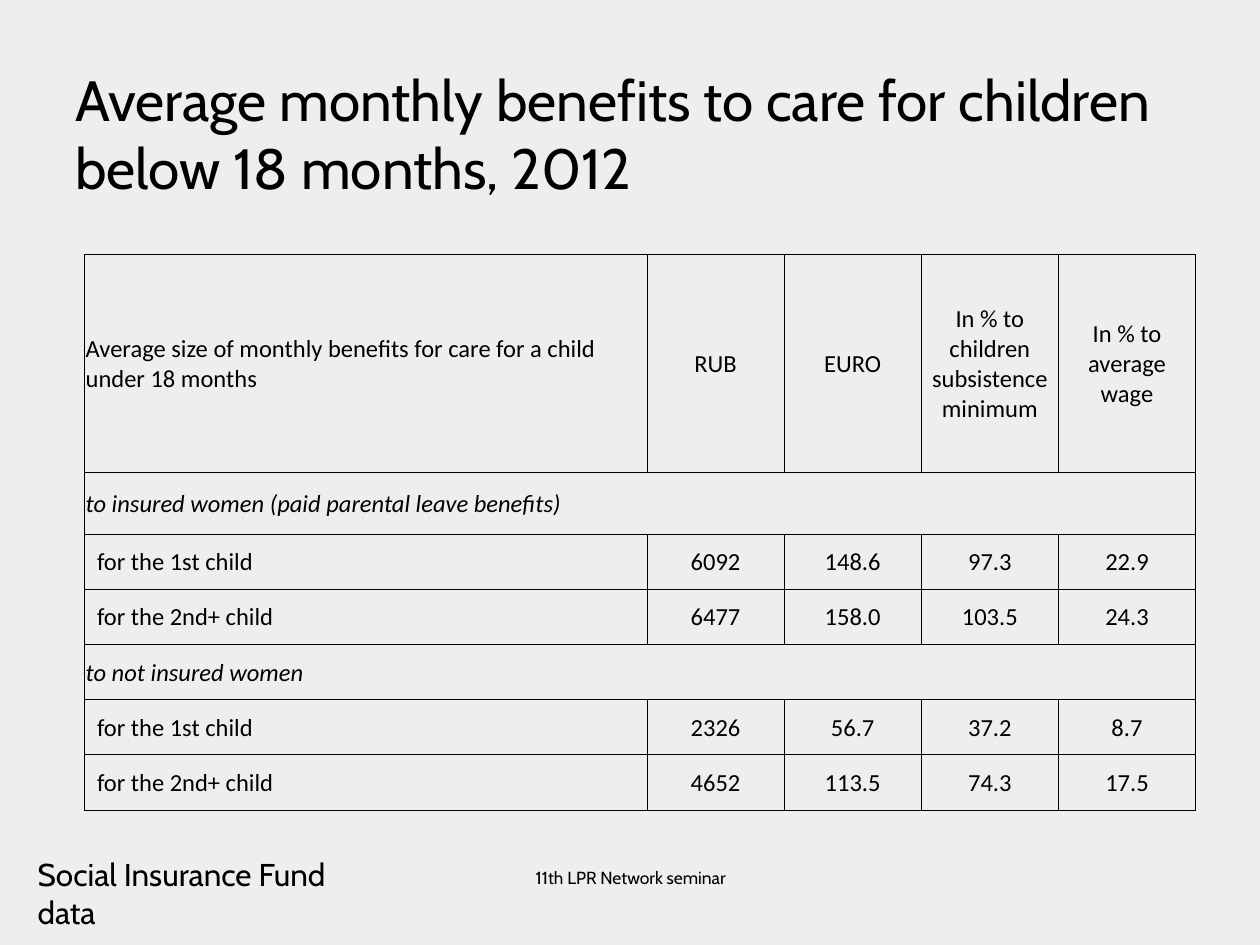
from lxml import etree
from pptx import Presentation
from pptx.dml.color import RGBColor
from pptx.enum.text import MSO_ANCHOR, MSO_AUTO_SIZE, PP_ALIGN
from pptx.oxml.ns import qn
from pptx.util import Inches, Pt

LEFT, CENTER = PP_ALIGN.LEFT, PP_ALIGN.CENTER
TOP, MIDDLE, BOTTOM = MSO_ANCHOR.TOP, MSO_ANCHOR.MIDDLE, MSO_ANCHOR.BOTTOM
FIT_SHAPE = MSO_AUTO_SIZE.SHAPE_TO_FIT_TEXT
NO_FIT = MSO_AUTO_SIZE.NONE

COLORS = {"background": "EEEEEE", "ink": "000000"}
BODY_FONT, TABLE_FONT = "Cabin", "Calibri"
BORDER_WIDTH = Pt(0.5)
GROUP_INDENT = Inches(0.1)

COLUMN_SHARES = [4.47, 1.09, 1.09, 1.09, 1.09]
ROW_HEIGHTS = [1.74, 0.49] + [0.44] * 5
BENEFITS = [
    ["Average size of monthly benefits for care for a child under 18 months",
     "RUB", "EURO", "In % to children subsistence minimum", "In % to average wage"],
    ["to insured women (paid parental leave benefits)"],
    ["for the 1st child", "6092", "148.6", "97.3", "22.9"],
    ["for the 2nd+ child", "6477", "158.0", "103.5", "24.3"],
    ["to not insured women"],
    ["for the 1st child", "2326", "56.7", "37.2", "8.7"],
    ["for the 2nd+ child", "4652", "113.5", "74.3", "17.5"],
]


def apply(target, values):
    for name, value in values.items():
        setattr(target, name, value)


def write(frame, words, font_name, size, align=LEFT, italic=False):
    paragraph = frame.paragraphs[0]
    paragraph.alignment = align
    run = paragraph.add_run()
    run.text = words
    apply(run.font, {"name": font_name, "size": Pt(size), "bold": False, "italic": italic})
    run.font.color.rgb = RGBColor.from_string(COLORS["ink"])


def add_text(slide, box, words, size, align=LEFT, anchor=TOP, fit=NO_FIT):
    frame = slide.shapes.add_textbox(*map(Inches, box)).text_frame
    apply(frame, {"word_wrap": True, "auto_size": fit, "vertical_anchor": anchor})
    write(frame, words, BODY_FONT, size, align)


def add_borders(cell):
    properties = cell._tc.get_or_add_tcPr()
    for side in ("a:lnL", "a:lnR", "a:lnT", "a:lnB"):
        line = etree.SubElement(properties, qn(side), w=str(BORDER_WIDTH))
        fill = etree.SubElement(line, qn("a:solidFill"))
        etree.SubElement(fill, qn("a:srgbClr"), val=COLORS["ink"])


def format_cell(cell, indent):
    apply(cell, {
        "margin_left": indent,
        "margin_right": Inches(0.01),
        "margin_top": Inches(0.01),
        "margin_bottom": 0,
        "vertical_anchor": MIDDLE,
    })
    add_borders(cell)
    cell.fill.background()


def add_benefits_table(slide, box):
    table = slide.shapes.add_table(
        len(BENEFITS), len(COLUMN_SHARES), *map(Inches, box)).table
    apply(table, {"first_row": False, "horz_banding": False})
    for column, share in zip(table.columns, COLUMN_SHARES):
        column.width = Inches(box[2] * share / sum(COLUMN_SHARES))
    for row, height in zip(table.rows, ROW_HEIGHTS):
        row.height = Inches(box[3] * height / sum(ROW_HEIGHTS))
    for row_index, entries in enumerate(BENEFITS):
        is_group = len(entries) == 1
        for column_index in range(len(COLUMN_SHARES)):
            is_child = column_index == 0 and row_index > 0 and not is_group
            format_cell(table.cell(row_index, column_index),
                        GROUP_INDENT if is_child else Inches(0.01))
        if is_group:
            table.cell(row_index, 0).merge(table.cell(row_index, len(COLUMN_SHARES) - 1))
        for column_index, entry in enumerate(entries):
            write(table.cell(row_index, column_index).text_frame, entry, TABLE_FONT, 14,
                  CENTER if column_index else LEFT, is_group)


def main():
    presentation = Presentation()
    apply(presentation, {"slide_width": Inches(10), "slide_height": Inches(7.5)})
    slide = presentation.slides.add_slide(presentation.slide_layouts[6])
    slide.background.fill.solid()
    slide.background.fill.fore_color.rgb = RGBColor.from_string(COLORS["background"])
    add_benefits_table(slide, (0.67, 2.02, 8.82, 4.41))
    add_text(slide, (0.5, 0.39, 9, 1.25),
             "Average monthly benefits to care for children below 18 months, 2012",
             32.4, anchor=BOTTOM)
    add_text(slide, (0.2, 6.74, 2.99, 0.4), "Social Insurance Fund data", 18, fit=FIT_SHAPE)
    add_text(slide, (3.42, 6.83, 3.17, 0.52), "11th LPR Network seminar", 10, CENTER)
    presentation.save("out.pptx")


if __name__ == "__main__":
    main()
